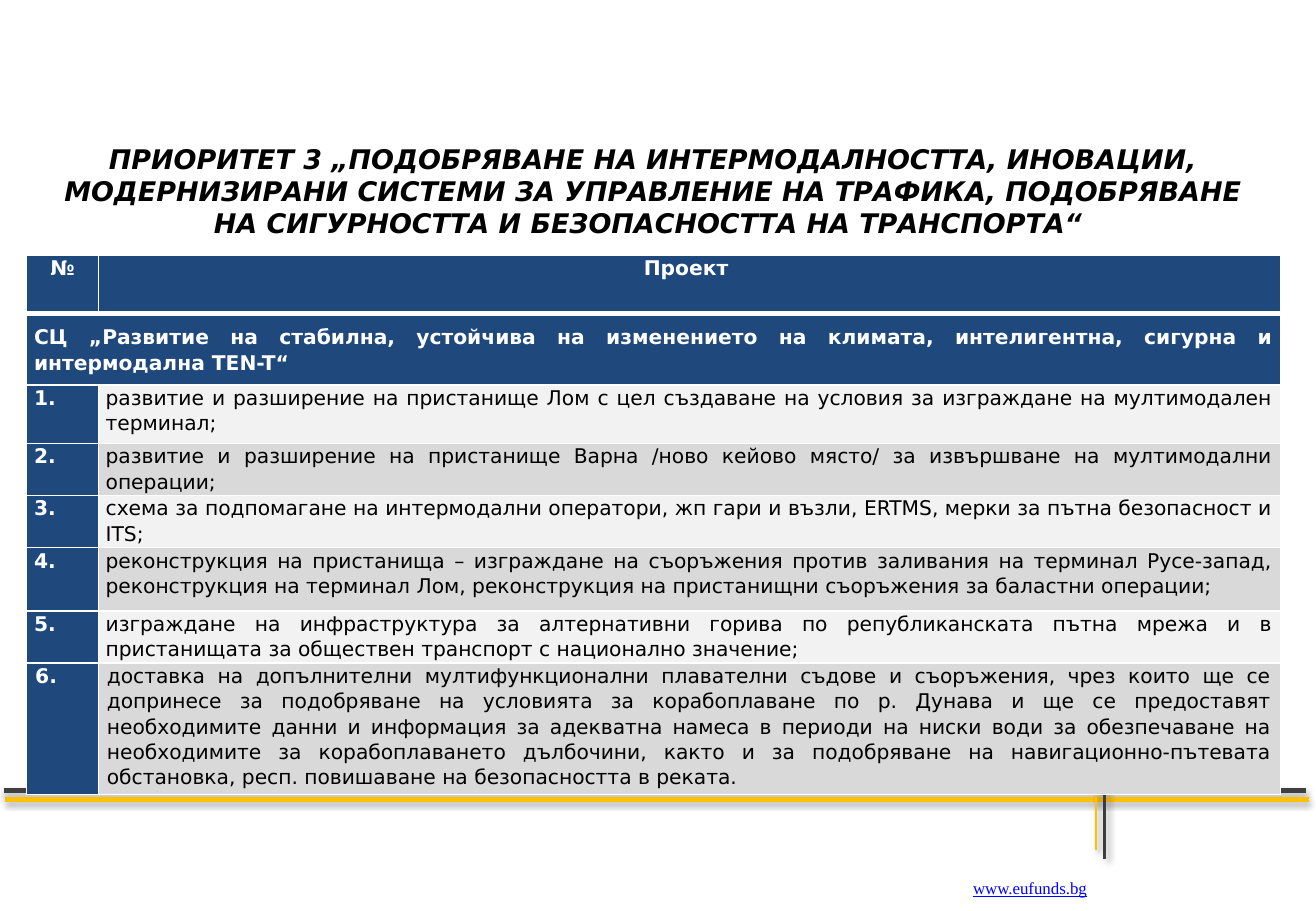
"""Build the slide listing the projects under Priority 3."""
from lxml import etree
from pptx import Presentation
from pptx.dml.color import RGBColor
from pptx.enum.shapes import MSO_CONNECTOR
from pptx.enum.text import MSO_ANCHOR, PP_ALIGN
from pptx.oxml import parse_xml
from pptx.oxml.ns import nsdecls
from pptx.util import Inches, Pt

NAVY, WHITE, BLACK = "1F497D", "FFFFFF", "000000"
GRAY, YELLOW = "404040", "FFC000"


def color(value):
    return RGBColor.from_string(value)


def add_text(paragraph, text, size, text_color, bold=False, name="DejaVu Sans"):
    run = paragraph.add_run()
    run.text = text
    run.font.name = name
    run.font.size = Pt(size)
    run.font.bold = bold
    run.font.color.rgb = color(text_color)
    return run


presentation = Presentation()
presentation.slide_width = Inches(10.83)
presentation.slide_height = Inches(7.5)
slide = presentation.slides.add_slide(presentation.slide_layouts[6])

flat_shadow = (35, 3.1, 1.8, 90)
slanted_shadow = (40, 4, 3, 45)
footer_lines = [
    (0.03, 6.51, 10.75, 6.51, GRAY, 3, flat_shadow),
    (0.04, 6.58, 10.77, 6.58, YELLOW, 3, flat_shadow),
    (9.09, 6.43, 9.09, 7.07, GRAY, 1.5, slanted_shadow),
    (9.02, 6.27, 9.02, 7, YELLOW, 1.5, slanted_shadow),
]
for left, top, right, bottom, line_color, width, shadow in footer_lines:
    connector = slide.shapes.add_connector(
        MSO_CONNECTOR.STRAIGHT, Inches(left), Inches(top), Inches(right), Inches(bottom))
    connector.line.color.rgb = color(line_color)
    connector.line.width = Pt(width)
    opacity, blur, distance, angle = shadow
    connector._element.spPr.append(parse_xml(
        f'<a:effectLst {nsdecls("a")}><a:outerShdw blurRad="{Pt(blur)}" dist="{Pt(distance)}" '
        f'dir="{angle * 60000}" rotWithShape="0"><a:srgbClr val="{BLACK}">'
        f'<a:alpha val="{opacity * 1000}"/></a:srgbClr></a:outerShdw></a:effectLst>'))

address = slide.shapes.add_textbox(Inches(7.91), Inches(7.18), Inches(1.16), Inches(0.27))
address.text_frame.word_wrap = False
run = add_text(address.text_frame.paragraphs[0], "www.eufunds.bg", 10, "0000FF",
               name="Times New Roman")
run.font.underline = True

title = slide.shapes.add_textbox(Inches(0.35), Inches(1.02), Inches(10.05), Inches(1))
title.text_frame.word_wrap = True
title.text_frame.vertical_anchor = MSO_ANCHOR.BOTTOM
paragraph = title.text_frame.paragraphs[0]
paragraph.alignment = PP_ALIGN.CENTER
run = add_text(
    paragraph,
    "ПРИОРИТЕТ 3 „ПОДОБРЯВАНЕ НА ИНТЕРМОДАЛНОСТТА, ИНОВАЦИИ, МОДЕРНИЗИРАНИ СИСТЕМИ "
    "ЗА УПРАВЛЕНИЕ НА ТРАФИКА, ПОДОБРЯВАНЕ НА СИГУРНОСТТА И БЕЗОПАСНОСТТА НА ТРАНСПОРТА“ ",
    16, BLACK, bold=True)
run.font.italic = True

projects = [
    "развитие и разширение на пристанище Лом с цел създаване на условия за изграждане на "
    "мултимодален терминал;",
    "развитие и разширение на пристанище Варна /ново кейово място/ за извършване на "
    "мултимодални операции;",
    "схема за подпомагане на интермодални оператори, жп гари и възли, ERTMS, мерки за пътна "
    "безопасност и ITS;",
    "реконструкция на пристанища – изграждане на съоръжения против заливания на терминал "
    "Русе-запад, реконструкция на терминал Лом, реконструкция на пристанищни съоръжения за "
    "баластни операции;",
    "изграждане на инфраструктура за алтернативни горива по републиканската пътна мрежа и в "
    "пристанищата за обществен транспорт с национално значение;",
    "доставка на допълнителни мултифункционални плавателни съдове и съоръжения, чрез които "
    "ще се допринесе за подобряване на условията за корабоплаване по р. Дунава и ще се "
    "предоставят необходимите данни и информация за адекватна намеса в периоди на ниски води "
    "за обезпечаване на необходимите за корабоплаването дълбочини, както и за подобряване на "
    "навигационно-пътевата обстановка, респ. повишаване на безопасността в реката.",
]
objective = ("СЦ „Развитие на стабилна, устойчива на изменението на климата, интелигентна, "
             "сигурна и интермодална TEN-T“")
rows = [("№", "Проект "), (objective, "")]
rows += [(f"{number}.", project) for number, project in enumerate(projects, 1)]
column_widths = [0.59, 9.73]
row_heights = [0.48, 0.59, 0.48, 0.43, 0.43, 0.52, 0.43, 1.08]

table = slide.shapes.add_table(
    len(rows), 2, Inches(0.22), Inches(2.1),
    Inches(sum(column_widths)), Inches(sum(row_heights))).table
table.first_row = False
table.horz_banding = False
for column, width in zip(table.columns, column_widths):
    column.width = Inches(width)
for row, height in zip(table.rows, row_heights):
    row.height = Inches(height)
table.cell(1, 0).merge(table.cell(1, 1))

for row_index, texts in enumerate(rows):
    for column_index, text in enumerate(texts):
        cell = table.cell(row_index, column_index)
        is_project = row_index > 1 and column_index == 1
        side_margin = 0.07 if row_index == len(rows) - 1 else 0.06
        cell.margin_left = cell.margin_right = Inches(side_margin)
        cell.margin_top = Inches(0.09 if row_index == 1 else 0)
        cell.margin_bottom = 0

        thick_side = {0: "lnB", 1: "lnT"}.get(row_index)
        properties = cell._tc.get_or_add_tcPr()
        for side in ("lnL", "lnR", "lnT", "lnB"):
            border_width = Pt(3 if side == thick_side else 1)
            border = parse_xml(
                f'<a:{side} {nsdecls("a")} w="{border_width}"><a:solidFill>'
                f'<a:srgbClr val="{WHITE}"/></a:solidFill></a:{side}>')
            properties.append(border)

        band = "F2F2F2" if row_index % 2 == 0 else "D9D9D9"
        cell.fill.solid()
        cell.fill.fore_color.rgb = color(band if is_project else NAVY)
        if text:
            paragraph = cell.text_frame.paragraphs[0]
            paragraph.alignment = PP_ALIGN.CENTER if row_index == 0 else PP_ALIGN.JUSTIFY
            paragraph.line_spacing = 1.07
            add_text(paragraph, text, 12, BLACK if is_project else WHITE, bold=not is_project)

presentation.save("out.pptx")
